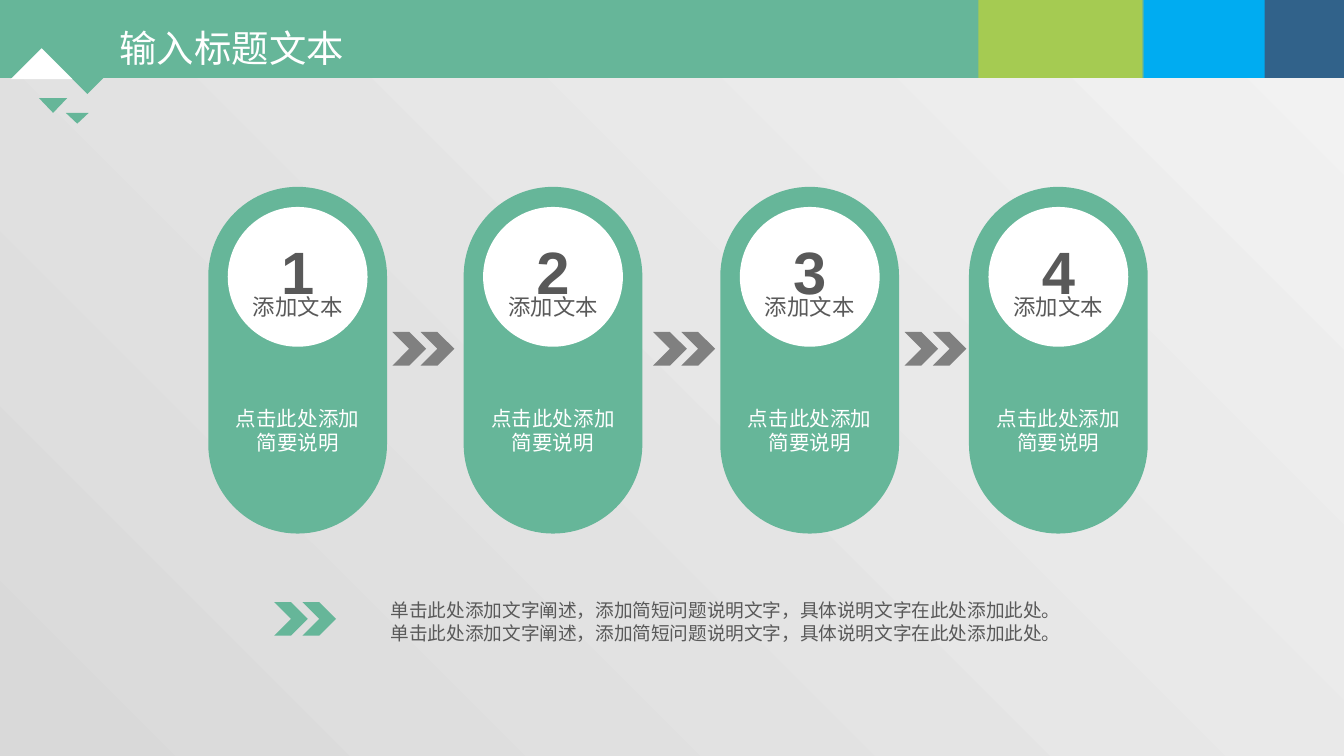
"""Build a four-step process slide with a coloured title band."""
from lxml.etree import SubElement
from pptx import Presentation
from pptx.dml.color import RGBColor
from pptx.enum.shapes import MSO_SHAPE as SHAPE
from pptx.enum.text import MSO_ANCHOR as ANCHOR, MSO_AUTO_SIZE as AUTO, PP_ALIGN as ALIGN
from pptx.oxml.ns import qn
from pptx.util import Inches, Pt

GREEN = RGBColor(0x66, 0xB6, 0x99)
LIME = RGBColor(0xA5, 0xCB, 0x52)
SKY = RGBColor(0x00, 0xAC, 0xF1)
NAVY = RGBColor(0x31, 0x62, 0x8A)
WHITE = RGBColor(0xFF, 0xFF, 0xFF)
INK = RGBColor(0x59, 0x59, 0x59)
GREY = RGBColor(0x80, 0x80, 0x80)
PALE = RGBColor(0xF2, 0xF2, 0xF2)
SILVER = RGBColor(0xD9, 0xD9, 0xD9)
CJK = "Noto Sans CJK SC"

TITLE = "输入标题文本"
LABEL = "添加文本"
DETAIL = ["点击此处添加", "简要说明"]
SUMMARY = ["单击此处添加文字阐述，添加简短问题说明文字，具体说明文字在此处添加此处。"] * 2
STEPS = [("1", 1.55), ("2", 3.45), ("3", 5.36), ("4", 7.21)]
ARROWS = [(2.92, 2.47, GREY), (4.86, 2.47, GREY), (6.73, 2.47, GREY), (2.04, 4.48, GREEN)]
BAND = [(0, 8.84, GREEN), (9.38, 0.62, NAVY), (8.51, 0.9, SKY), (7.28, 1.22, LIME)]
TRIANGLES = [
    (0.48, 0.53, 0.34, 0.17, GREEN),
    (0.49, 0.84, 0.17, 0.08, GREEN),
    (0.08, 0.59, 0.46, -0.23, WHITE),
    (0.29, 0.73, 0.21, 0.11, GREEN),
]
BAND_H = 0.58
PILL_W, PILL_H, PILL_TOP = 1.33, 2.58, 1.39
DISC = 1.04
CHEVRON, CHEVRON_STEP = 0.25, 0.21


def paint(sp, color):
    sp.fill.solid()
    sp.fill.fore_color.rgb = color
    sp.line.fill.background()
    sp.shadow.inherit = False
    return sp


def add_shape(s, kind, x, y, w, h, color):
    return paint(s.shapes.add_shape(kind, *map(Inches, (x, y, w, h))), color)


def add_triangle(s, x, y, w, h, color):
    x, y, w, h = map(Inches, (x, y, w, h))
    builder = s.shapes.build_freeform(x, y)
    builder.add_line_segments([(x + w, y), (x + w // 2, y + h)], close=True)
    paint(builder.convert_to_shape(), color)


def write(sp, lines, size, color, font=CJK, bold=False, align=ALIGN.CENTER,
          spacing=None, inset=None, wrap=True):
    tf = sp.text_frame
    tf.word_wrap = wrap
    tf.auto_size = AUTO.NONE
    tf.vertical_anchor = ANCHOR.TOP
    if inset is not None:
        tf.margin_left = tf.margin_right = tf.margin_top = tf.margin_bottom = inset
    for i, line in enumerate(lines):
        p = tf.add_paragraph() if i else tf.paragraphs[0]
        p.alignment = align
        p.line_spacing = spacing
        r = p.add_run()
        r.text = line
        r.font.size = Pt(size)
        r.font.bold = bold
        r.font.color.rgb = color
        r.font.name = font
        SubElement(r._r.get_or_add_rPr(), qn("a:ea"), typeface=font)


def add_text(s, x, y, w, h, lines, size, color, **fmt):
    write(s.shapes.add_textbox(*map(Inches, (x, y, w, h))), lines, size, color, **fmt)


def add_header(s):
    for x, w, color in BAND:
        add_shape(s, SHAPE.RECTANGLE, x, 0, w, BAND_H, color)
    for triangle in TRIANGLES:
        add_triangle(s, *triangle)
    title = s.shapes.title
    title.left, title.top, title.width, title.height = map(Inches, (0.89, 0.09, 1.9, 0.44))
    write(title, [TITLE], 20, WHITE, align=ALIGN.LEFT, spacing=1.3, inset=0)
    title.element.getparent().append(title.element)


def add_step(s, number, x):
    def centred(w):
        return x + (PILL_W - w) / 2

    pill = add_shape(s, SHAPE.ROUNDED_RECTANGLE, x, PILL_TOP, PILL_W, PILL_H, GREEN)
    pill.adjustments[0] = 0.5
    add_shape(s, SHAPE.OVAL, centred(DISC), 1.54, DISC, DISC, WHITE)
    add_text(s, centred(1.14), 1.48, 1.14, 0.81, [number], 32, INK,
             font="Arial", bold=True, spacing=1.5, inset=0)
    add_text(s, centred(0.88), 2.13, 0.88, 0.3, [LABEL], 12, INK, wrap=False)
    add_text(s, centred(1.19), 2.97, 1.19, 0.47, DETAIL, 11, WHITE)


def main():
    prs = Presentation()
    prs.slide_width = Inches(10)
    prs.slide_height = prs.slide_width * 9 // 16
    s = prs.slides.add_slide(prs.slide_layouts[5])
    fill = s.background.fill
    fill.gradient()
    fill.gradient_angle = 45
    for stop, color in zip(fill.gradient_stops, (SILVER, PALE)):
        stop.color.rgb = color
    add_header(s)
    for number, x in STEPS:
        add_step(s, number, x)
    for x, y, color in ARROWS:
        for i in range(2):
            add_shape(s, SHAPE.CHEVRON, x + i * CHEVRON_STEP, y, CHEVRON, CHEVRON, color)
    add_text(s, 2.81, 4.41, 5.67, 0.44, SUMMARY, 10, INK, align=ALIGN.JUSTIFY)
    prs.save("out.pptx")


if __name__ == "__main__":
    main()
